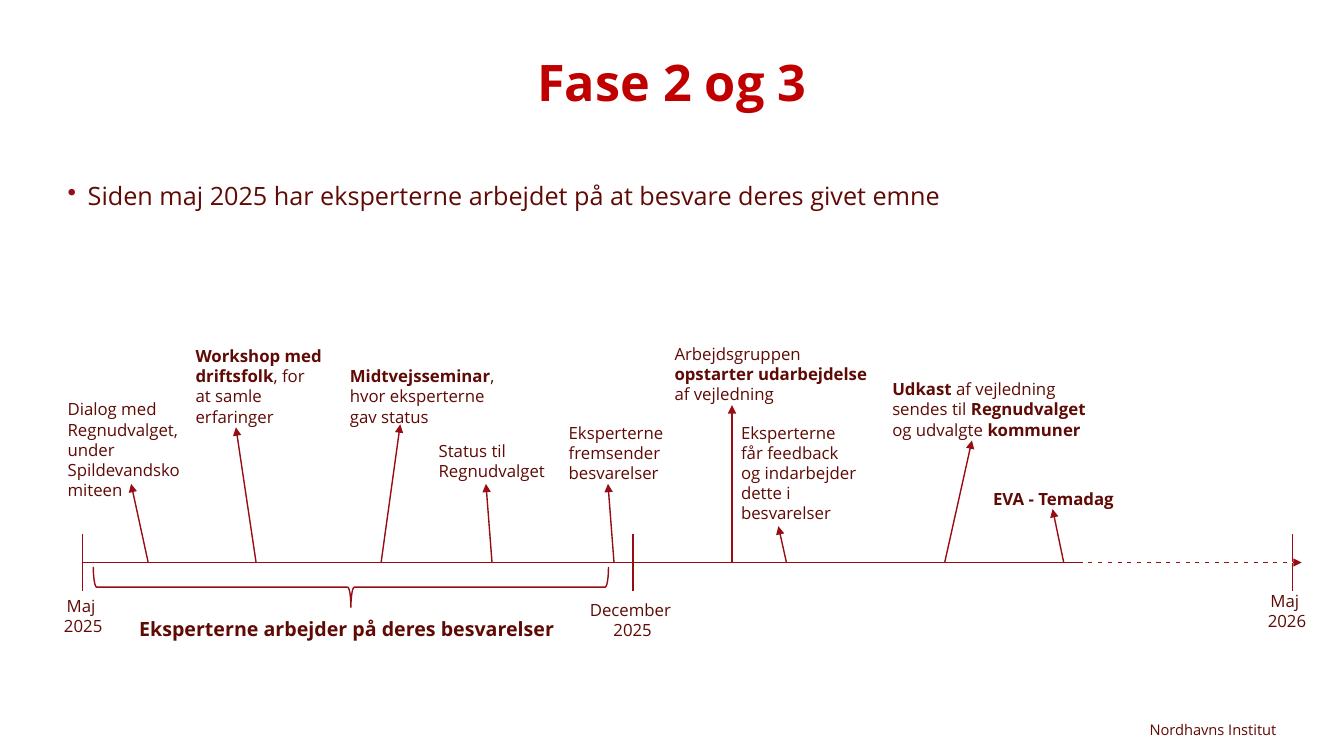
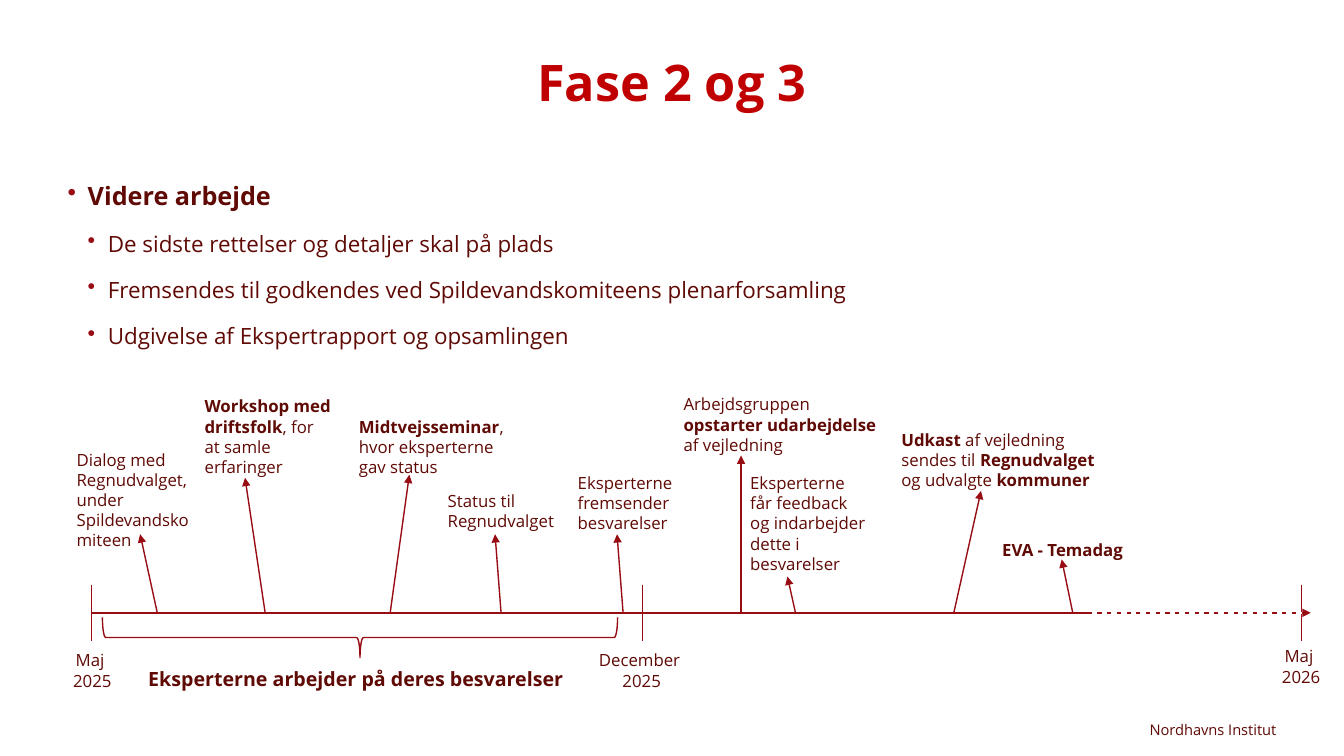
from lxml import etree
from pptx import Presentation
from pptx.dml.color import RGBColor
from pptx.enum.dml import MSO_LINE
from pptx.enum.shapes import MSO_CONNECTOR, MSO_SHAPE
from pptx.enum.text import MSO_ANCHOR, PP_ALIGN
from pptx.oxml.ns import qn
from pptx.util import Pt

PX = 9144
FONT = "Open Sans"
COLORS = {"title": "C00000", "text": "5F0A05", "line": "980C13", "gap": "FFFFFF"}
LEFT, CENTER, RIGHT = PP_ALIGN.LEFT, PP_ALIGN.CENTER, PP_ALIGN.RIGHT
TOP, MIDDLE, BOTTOM = MSO_ANCHOR.TOP, MSO_ANCHOR.MIDDLE, MSO_ANCHOR.BOTTOM
STRAIGHT = MSO_CONNECTOR.STRAIGHT
BRACE = MSO_SHAPE.RIGHT_BRACE
DASH = MSO_LINE.DASH

TITLE = "Fase 2 og 3"
FOOTER = "Nordhavns Institut"
BRACE_LABEL = "*Eksperterne arbejder på deres besvarelser*"

# Text between asterisks is bold.
SLIDES = [
    {
        "bullets": [(0, "Siden maj 2025 har eksperterne arbejdet på at besvare deres givet emne")],
        "body_height": 59,
        "shift": (0, 0),
        "date_corners": [(43, 591), (584, 595), (1233, 586)],
    },
    {
        "bullets": [
            (0, "*Videre arbejde*"),
            (1, "De sidste rettelser og detaljer skal på plads"),
            (1, "Fremsendes til godkendes ved Spildevandskomiteens plenarforsamling"),
            (1, "Udgivelse af Ekspertrapport og opsamlingen"),
        ],
        "body_height": 169,
        "shift": (9, 50),
        "date_corners": [(52, 645), (593, 645), (1247, 641)],
    },
]

AXIS_Y = 558
AXIS_START, DASH_START, AXIS_END = 82, 1073, 1291
DATES = [
    (["Maj ", "2025"], 82, 79),
    (["December ", "2025"], 628, 87),
    (["Maj ", "2026"], 1282, 87),
]
MILESTONES = [
    ("*Workshop med driftsfolk*, for at samle erfaringer", (194, 343, 127, 81), 254, (234, 424)),
    ("Dialog med Regnudvalget, under Spildevandskomiteen", (67, 396, 119, 101), 147, (130, 480)),
    ("*Midtvejsseminar*, hvor eksperterne gav status", (347, 363, 155, 61), 378, (397, 421)),
    ("Status til Regnudvalget", (435, 437, 140, 40), 488, (482, 480)),
    ("Eksperterne fremsender besvarelser", (564, 419, 115, 61), 609, (603, 480)),
    ("Arbejdsgruppen *opstarter udarbejdelse *af vejledning", (669, 341, 207, 61), 726, (726, 402)),
    ("Eksperterne får feedback og indarbejder dette i besvarelser",
     (735, 419, 115, 101), 780, (772, 522)),
    ("*Udkast* af vejledning sendes til *Regnudvalget* og udvalgte *kommuner*",
     (885, 376, 207, 61), 937, (964, 437)),
    ("*EVA - Temadag*", (985, 485, 140, 20), 1055, (1044, 505)),
]


def color(key):
    return RGBColor.from_string(COLORS[key])


def write_runs(paragraph, marked, size, ink="text"):
    for index, part in enumerate(marked.split("*")):
        if part:
            run = paragraph.add_run()
            run.text = part
            run.font.name = FONT
            run.font.size = Pt(size)
            run.font.bold = index % 2 == 1
            run.font.color.rgb = color(ink)


def add_text(slide, box, lines, size, align=LEFT, anchor=TOP, ink="text", inset_top=0):
    frame = slide.shapes.add_textbox(*(v * PX for v in box)).text_frame
    frame.word_wrap = True
    frame.vertical_anchor = anchor
    frame.margin_left = frame.margin_right = frame.margin_bottom = 0
    frame.margin_top = inset_top * PX
    for index, line in enumerate(lines):
        paragraph = frame.add_paragraph() if index else frame.paragraphs[0]
        paragraph.alignment = align
        write_runs(paragraph, line, size, ink)
    return frame


def add_bullets(slide, box, bullets):
    frame = add_text(slide, box, [], 18)
    for index, (level, line) in enumerate(bullets):
        paragraph = frame.add_paragraph() if index else frame.paragraphs[0]
        paragraph.level = level
        paragraph.line_spacing = 1.2
        paragraph.space_before = Pt(10 if index else 0)
        props = paragraph._p.get_or_add_pPr()
        props.set("marL", str(20 * (level + 1) * PX))
        props.set("indent", str(-20 * PX))
        bullet_color = etree.SubElement(props, qn("a:buClr"))
        etree.SubElement(bullet_color, qn("a:srgbClr")).set("val", COLORS["line"])
        etree.SubElement(props, qn("a:buChar")).set("char", "•")
        write_runs(paragraph, line, 18 - 2 * level)


def add_line(slide, start, end, ink="line", arrow=False, dash=None):
    line = slide.shapes.add_connector(STRAIGHT, *(v * PX for v in (*start, *end)))
    line.line.color.rgb = color(ink)
    line.line.width = Pt(1)
    if dash:
        line.line.dash_style = dash
    if arrow:
        etree.SubElement(line.line._get_or_add_ln(), qn("a:tailEnd")).set("type", "triangle")
    etree.SubElement(line._element.spPr, qn("a:effectLst"))


def add_timeline(slide, shift, date_corners):
    dx, dy = shift

    def moved(x, y, *size):
        return (x + dx, y + dy, *size)

    add_line(slide, moved(AXIS_START, AXIS_Y), moved(AXIS_END, AXIS_Y), arrow=True)
    for (lines, tick, width), corner in zip(DATES, date_corners):
        add_line(slide, moved(tick, AXIS_Y - 28), moved(tick, AXIS_Y + 28))
        add_text(slide, (*corner, width, 40), lines, 12, CENTER)

    add_text(slide, moved(138, 612, 419, 24), [BRACE_LABEL], 14)
    brace = slide.shapes.add_shape(BRACE, *(v * PX for v in moved(328, 327, 40, 511)))
    brace.rotation = 90
    brace.shadow.inherit = False
    brace.fill.background()
    brace.line.color.rgb = color("line")
    brace.line.width = Pt(1)

    for label, box, foot, tip in MILESTONES:
        add_line(slide, moved(foot, AXIS_Y), moved(*tip), arrow=True)
        add_text(slide, moved(*box), [label], 12)
    add_line(slide, moved(DATES[-1][1], AXIS_Y), moved(DASH_START, AXIS_Y), "gap", dash=DASH)


def main():
    deck = Presentation()
    deck.slide_width, deck.slide_height = 1333 * PX, 750 * PX
    for content in SLIDES:
        slide = deck.slides.add_slide(deck.slide_layouts[6])
        add_text(slide, (1115, 709, 151, 24), [FOOTER], 10.5, RIGHT, BOTTOM, inset_top=5)
        title = add_text(slide, (67, 33, 1199, 103), [f"*{TITLE}*"], 36, CENTER, MIDDLE, "title")
        title.paragraphs[0].line_spacing = 0.9
        add_bullets(slide, (67, 173, 1199, content["body_height"]), content["bullets"])
        add_timeline(slide, content["shift"], content["date_corners"])
    deck.save("out.pptx")


if __name__ == "__main__":
    main()
